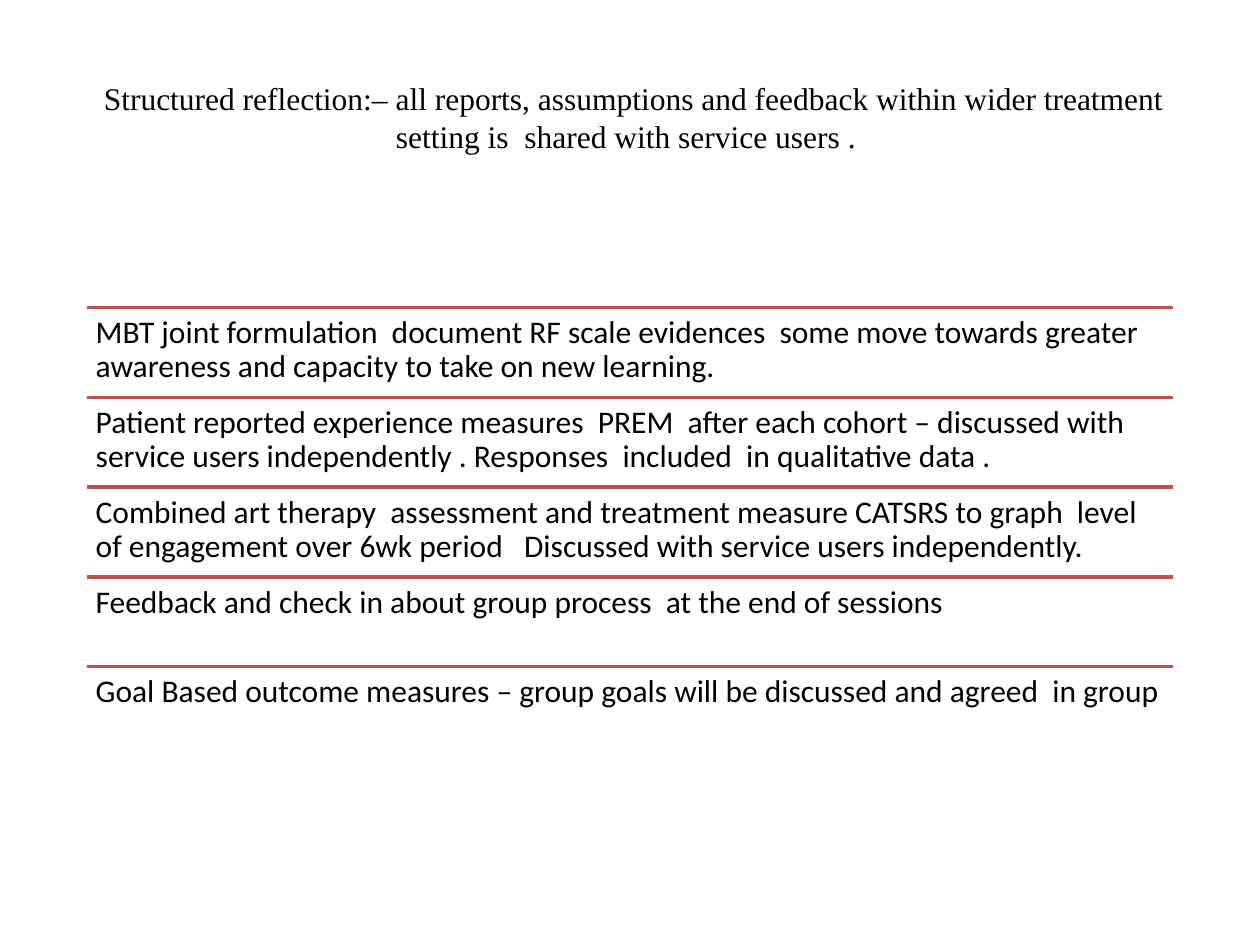
from dataclasses import dataclass

from lxml.etree import SubElement
from pptx import Presentation
from pptx.dml.color import RGBColor
from pptx.enum.shapes import MSO_CONNECTOR as Connector
from pptx.enum.text import MSO_ANCHOR as Anchor, PP_ALIGN as Align
from pptx.oxml.ns import qn
from pptx.slide import Slide
from pptx.util import Cm, Length, Pt

BLACK = RGBColor(0x00, 0x00, 0x00)
RED = RGBColor(0xC0, 0x50, 0x4D)

LIST_LEFT, LIST_TOP = Cm(1.75), Cm(6.2)
LIST_WIDTH, ROW_HEIGHT = Cm(21.9), Cm(1.81)

TITLE = (" Structured reflection:– all reports, assumptions and feedback within "
         "wider treatment setting is  shared with service users . ")
MEASURES = [
    "MBT joint formulation  document RF scale evidences  some move towards "
    "greater awareness and capacity to take on new learning.",
    "Patient reported experience measures  PREM  after each cohort – discussed with "
    "service users independently . Responses  included  in qualitative data .",
    "Combined art therapy  assessment and treatment measure CATSRS to graph  level "
    "of engagement over 6wk period   Discussed with service users independently.",
    "Feedback and check in about group process  at the end of sessions",
    "Goal Based outcome measures – group goals will be discussed and agreed  in group",
]


@dataclass(frozen=True)
class TextStyle:
    font: str
    align: Align
    anchor: Anchor
    inset_x: Length
    inset_y: Length
    line_spacing: float


TITLE_STYLE = TextStyle("Times New Roman", Align.CENTER, Anchor.MIDDLE,
                        Cm(0.25), Cm(0.13), 1.0)
MEASURE_STYLE = TextStyle("Calibri", Align.LEFT, Anchor.TOP,
                          Cm(0.18), Cm(0.18), 0.9)


def add_text(page: Slide, text: str, style: TextStyle, left: Length,
             top: Length, width: Length, height: Length) -> None:
    frame = page.shapes.add_textbox(left, top, width, height).text_frame
    frame.word_wrap = True
    frame.vertical_anchor = style.anchor
    frame.margin_left = frame.margin_right = style.inset_x
    frame.margin_top = frame.margin_bottom = style.inset_y
    frame.text = text
    para = frame.paragraphs[0]
    para.alignment = style.align
    para.line_spacing = style.line_spacing
    span = para.runs[0]
    span.font.name = style.font
    span.font.size = Pt(18)
    span.font.color.rgb = BLACK


def add_rule(page: Slide, top: Length) -> None:
    rule = page.shapes.add_connector(Connector.STRAIGHT, LIST_LEFT, top,
                                     LIST_LEFT + LIST_WIDTH, top)
    rule.line.color.rgb = RED
    rule.line.width = Pt(2)
    SubElement(rule.element.spPr, qn("a:effectLst"))


def main() -> None:
    deck = Presentation()
    deck.slide_width, deck.slide_height = Cm(25.4), Cm(19.05)
    page = deck.slides.add_slide(deck.slide_layouts[6])
    add_text(page, TITLE, TITLE_STYLE, Cm(1.27), Cm(0.76), Cm(22.86), Cm(3.18))
    for row, measure in enumerate(MEASURES):
        top = LIST_TOP + row * ROW_HEIGHT
        add_rule(page, top)
        add_text(page, measure, MEASURE_STYLE, LIST_LEFT, top, LIST_WIDTH, ROW_HEIGHT)
    deck.save("out.pptx")


if __name__ == "__main__":
    main()
